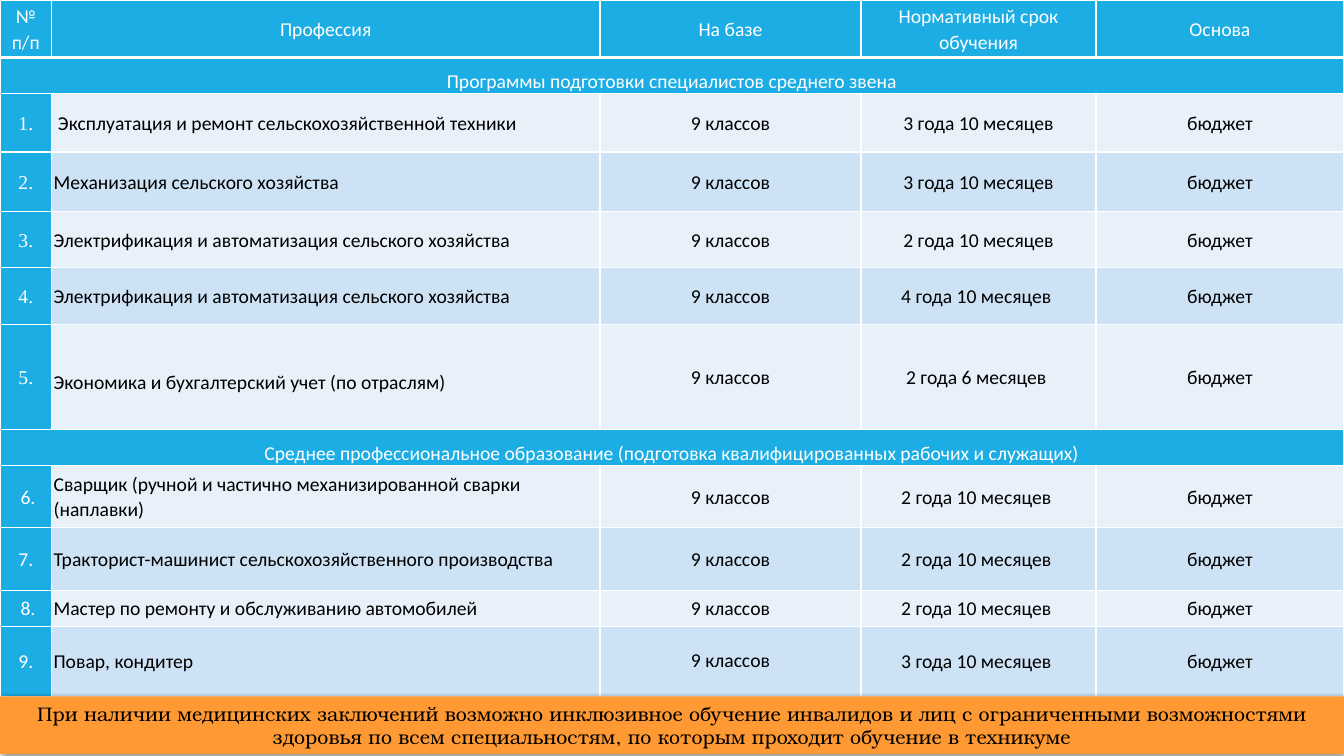
from dataclasses import dataclass

from lxml.etree import SubElement
from pptx import Presentation
from pptx.dml.color import RGBColor
from pptx.enum.shapes import MSO_SHAPE
from pptx.enum.text import MSO_ANCHOR, MSO_AUTO_SIZE, PP_ALIGN
from pptx.oxml.ns import qn
from pptx.table import Table, _Cell
from pptx.util import Cm, Pt

WHITE = RGBColor(0xFF, 0xFF, 0xFF)
BLACK = RGBColor(0x00, 0x00, 0x00)
BLUE = RGBColor(0x1C, 0xAD, 0xE4)
LIGHT = RGBColor(0xE8, 0xF1, 0xFA)
MEDIUM = RGBColor(0xCD, 0xE3, 0xF5)
ORANGE = RGBColor(0xFF, 0x99, 0x33)

BODY_FONT = "Calibri"
NUMBER_FONT = "Times New Roman"
NOTE_FONT = "TeX Gyre Bonum"
TEXT_SIZE = Pt(14)
PAGE_WIDTH, PAGE_HEIGHT = Cm(33.87), Cm(19.05)
COLUMN_WIDTHS = (1.3, 13.82, 6.58, 5.92, 6.25)
HEADER_HEIGHT, SECTION_HEIGHT = 1.45, 0.91
TABLE_HEIGHT = 17.55
CELL_INSET = 0.05

HEADINGS = ("№ п/п", "Профессия", "На базе", "Нормативный срок обучения", "Основа")
NOTE = (
    "При наличии медицинских заключений возможно инклюзивное обучение инвалидов и лиц "
    "с ограниченными возможностями здоровья по всем специальностям, по которым проходит "
    "обучение в техникуме"
)


@dataclass(frozen=True)
class Course:
    number: str
    name: str
    term: str
    height: float
    number_font: str = BODY_FONT
    name_top: float = CELL_INSET
    base: str = "9 классов"
    funding: str = "бюджет"


@dataclass(frozen=True)
class Section:
    title: str
    courses: tuple[Course, ...]


SECTIONS = (
    Section("Программы подготовки специалистов среднего звена", (
        Course("1.", " Эксплуатация и ремонт сельскохозяйственной техники",
               "3 года 10 месяцев", 1.47, NUMBER_FONT),
        Course("2.", "Механизация сельского хозяйства", "3 года 10 месяцев", 1.5, NUMBER_FONT),
        Course("3.", "Электрификация и автоматизация сельского хозяйства",
               "2 года 10 месяцев", 1.42, NUMBER_FONT),
        Course("4.", "Электрификация и автоматизация сельского хозяйства",
               "4 года 10 месяцев ", 1.42, NUMBER_FONT),
        Course("5.", "Экономика и бухгалтерский учет (по отраслям)",
               "2 года 6 месяцев ", 2.65, NUMBER_FONT, name_top=0.3),
    )),
    Section("Среднее профессиональное образование (подготовка квалифицированных рабочих и служащих)", (
        Course(" 6.", "Сварщик (ручной и частично механизированной сварки (наплавки)",
               "2 года 10 месяцев ", 1.57),
        Course("7.", "Тракторист-машинист сельскохозяйственного производства",
               "2 года 10 месяцев ", 1.57),
        Course(" 8.", "Мастер по ремонту и обслуживанию автомобилей",
               "2 года 10 месяцев ", 0.91),
        Course("9.", "Повар, кондитер", "3 года 10 месяцев ", 1.77),
    )),
)


def set_borders(cell: _Cell, bottom: float = 1) -> None:
    properties = cell._tc.get_or_add_tcPr()
    for side, width in (("lnL", 1), ("lnR", 1), ("lnT", 1), ("lnB", bottom)):
        line = SubElement(properties, qn(f"a:{side}"), w=str(Pt(width)))
        SubElement(SubElement(line, qn("a:solidFill")), qn("a:srgbClr"), val=str(WHITE))


def fill_cell(
    cell: _Cell,
    text: str,
    fill: RGBColor,
    color: RGBColor,
    font: str = BODY_FONT,
    align: PP_ALIGN = PP_ALIGN.CENTER,
    anchor: MSO_ANCHOR = MSO_ANCHOR.MIDDLE,
    inset: float = 0,
    bottom_border: float = 1,
) -> None:
    set_borders(cell, bottom_border)
    cell.fill.solid()
    cell.fill.fore_color.rgb = fill
    cell.margin_left = cell.margin_right = Cm(inset)
    cell.margin_top = cell.margin_bottom = Cm(inset)
    cell.vertical_anchor = anchor
    cell.text_frame.text = text
    para = cell.text_frame.paragraphs[0]
    para.alignment = align
    para.line_spacing = 1.07
    para.space_after = Pt(8)
    span = para.runs[0]
    span.font.size = TEXT_SIZE
    span.font.name = font
    span.font.color.rgb = color


def fill_section(table: Table, row: int, title: str) -> None:
    table.rows[row].height = Cm(SECTION_HEIGHT)
    first, *others = table.rows[row].cells
    first.merge(others[-1])
    fill_cell(first, title, BLUE, WHITE, anchor=MSO_ANCHOR.BOTTOM)
    for cell in others:
        set_borders(cell)


def fill_course(table: Table, row: int, course: Course, band: RGBColor) -> None:
    table.rows[row].height = Cm(course.height)
    number, name, base, term, funding = table.rows[row].cells
    fill_cell(number, course.number, BLUE, WHITE, font=course.number_font)
    fill_cell(name, course.name, band, BLACK, align=PP_ALIGN.LEFT, inset=CELL_INSET)
    name.margin_top = Cm(course.name_top)
    for cell, text in ((base, course.base), (term, course.term), (funding, course.funding)):
        fill_cell(cell, text, band, BLACK)


def add_course_table(page) -> None:
    row_count = 1 + sum(1 + len(section.courses) for section in SECTIONS)
    table = page.shapes.add_table(
        row_count, len(HEADINGS), 0, 0, PAGE_WIDTH, Cm(TABLE_HEIGHT)
    ).table
    table.first_row = table.horz_banding = False
    for column, width in zip(table.columns, COLUMN_WIDTHS):
        column.width = Cm(width)

    # Header row
    table.rows[0].height = Cm(HEADER_HEIGHT)
    for cell, heading in zip(table.rows[0].cells, HEADINGS):
        fill_cell(cell, heading, BLUE, WHITE, bottom_border=3)

    # Sections with alternating course rows
    row = 1
    for section in SECTIONS:
        fill_section(table, row, section.title)
        for index, course in enumerate(section.courses):
            fill_course(table, row + 1 + index, course, MEDIUM if index % 2 else LIGHT)
        row += 1 + len(section.courses)

    # The last course has a fixed line height for its base
    table.cell(row_count - 1, 2).text_frame.paragraphs[0].line_spacing = Pt(15.6)


def add_note(page) -> None:
    box = page.shapes.add_shape(
        MSO_SHAPE.RECTANGLE, 0, Cm(TABLE_HEIGHT), PAGE_WIDTH, Cm(1.45)
    )
    box.fill.solid()
    box.fill.fore_color.rgb = ORANGE
    box.line.fill.background()

    # Soft shadow straight below
    box.shadow.inherit = False
    effects = box._element.spPr.find(qn("a:effectLst"))
    shadow = SubElement(effects, qn("a:outerShdw"), blurRad=str(Pt(3.5)),
                        dist=str(Pt(1.1)), dir="5400000", rotWithShape="0")
    shade = SubElement(shadow, qn("a:srgbClr"), val=str(BLACK))
    SubElement(shade, qn("a:alpha"), val="45000")

    frame = box.text_frame
    frame.text = NOTE
    frame.word_wrap = True
    frame.auto_size = MSO_AUTO_SIZE.SHAPE_TO_FIT_TEXT
    frame.vertical_anchor = MSO_ANCHOR.MIDDLE
    para = frame.paragraphs[0]
    para.alignment = PP_ALIGN.CENTER
    span = para.runs[0]
    span.font.size = TEXT_SIZE
    span.font.name = NOTE_FONT
    span.font.color.rgb = BLACK


def main() -> None:
    deck = Presentation()
    deck.slide_width, deck.slide_height = PAGE_WIDTH, PAGE_HEIGHT
    page = deck.slides.add_slide(deck.slide_layouts[6])
    add_course_table(page)
    add_note(page)
    deck.save("out.pptx")


if __name__ == "__main__":
    main()
